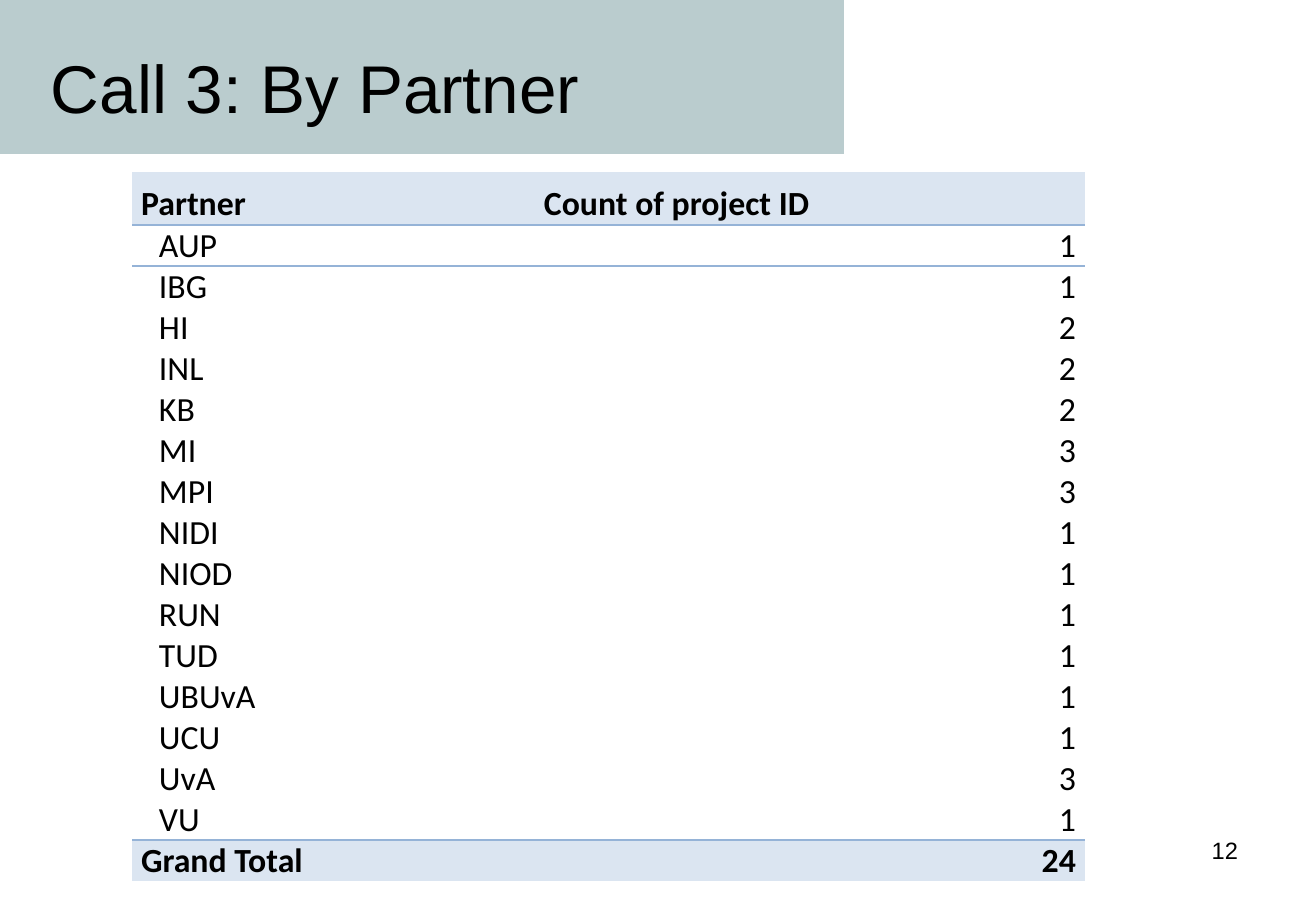
from lxml.etree import SubElement
from pptx import Presentation
from pptx.dml.color import RGBColor
from pptx.enum.shapes import MSO_SHAPE
from pptx.enum.text import MSO_ANCHOR, PP_ALIGN
from pptx.oxml import parse_xml
from pptx.oxml.ns import nsdecls, qn
from pptx.util import Pt

SCALE = 7526
COLORS = {"band": "BACCCE", "head": "DBE5F1", "rule": "95B3D7", "text": "000000"}
NO_GRID = "{2D5ABB26-0587-4C30-8999-92F81FD0307C}"
COUNTS = [
    ("AUP", 1), ("IBG", 1), ("HI", 2), ("INL", 2), ("KB", 2),
    ("MI", 3), ("MPI", 3), ("NIDI", 1), ("NIOD", 1), ("RUN", 1),
    ("TUD", 1), ("UBUvA", 1), ("UCU", 1), ("UvA", 3), ("VU", 1),
]


def px(*sizes):
    return [size * SCALE for size in sizes]


class Painter:
    """Draws the elements of one slide in a shared style."""

    def __init__(self, slide):
        self.slide = slide

    def style(self, para, size, font, bold=False, align=PP_ALIGN.LEFT):
        para.alignment = align
        for run in para.runs:
            run.font.size = Pt(size)
            run.font.name = font
            run.font.bold = bold
            run.font.color.rgb = RGBColor.from_string(COLORS["text"])

    def band(self, box, color):
        shape = self.slide.shapes.add_shape(MSO_SHAPE.RECTANGLE, *px(*box))
        shape.shadow.inherit = False
        shape.fill.solid()
        shape.fill.fore_color.rgb = RGBColor.from_string(COLORS[color])
        shape.line.fill.background()

    def text(self, box, text, size, align=PP_ALIGN.LEFT, anchor=MSO_ANCHOR.TOP):
        frame = self.slide.shapes.add_textbox(*px(*box)).text_frame
        frame.word_wrap = True
        frame.vertical_anchor = anchor
        frame.text = text
        self.style(frame.paragraphs[0], size, "Arial", align=align)

    def rule(self, cell, side):
        props = cell._tc.get_or_add_tcPr()
        line = parse_xml(f'<a:{side} {nsdecls("a")} w="12700"/>')
        fill = SubElement(line, qn("a:solidFill"))
        SubElement(fill, qn("a:srgbClr"), val=COLORS["rule"])
        props.insert(0, line)

    def cell(self, cell, text, strong, align):
        cell.text = text
        cell.vertical_anchor = MSO_ANCHOR.BOTTOM
        cell.margin_left, cell.margin_right = px(9, 9)
        cell.margin_top = cell.margin_bottom = 0
        para = cell.text_frame.paragraphs[0]
        self.style(para, 20, "Calibri", strong, align)
        if strong:
            cell.fill.solid()
            cell.fill.fore_color.rgb = RGBColor.from_string(COLORS["head"])
        else:
            cell.fill.background()
            if align == PP_ALIGN.LEFT:
                para._p.get_or_add_pPr().set("indent", str(18 * SCALE))

    def table(self, spot, widths, top, height, rows):
        last = len(rows) - 1
        box = (*spot, sum(widths), top + height * last)
        table = self.slide.shapes.add_table(len(rows), len(widths), *px(*box)).table
        table.first_row = table.horz_banding = False
        table._tbl.tblPr.find(qn("a:tableStyleId")).text = NO_GRID
        for col, width in zip(table.columns, px(*widths)):
            col.width = width
        for i, row in enumerate(rows):
            table.rows[i].height = (height if i else top) * SCALE
            for j, value in enumerate(row):
                cell = table.cell(i, j)
                align = PP_ALIGN.RIGHT if i and j else PP_ALIGN.LEFT
                self.cell(cell, str(value), i in (0, last), align)
                if i in (0, last - 1):
                    self.rule(cell, "lnB")
                if i in (1, last):
                    self.rule(cell, "lnT")


def main():
    deck = Presentation()
    deck.slide_width, deck.slide_height = px(1316, 911)
    art = Painter(deck.slides.add_slide(deck.slide_layouts[6]))
    art.band((0, 0, 844, 154), "band")
    art.text((943, 830, 307, 63), "12", 14, align=PP_ALIGN.RIGHT)
    art.text((39, 32, 840, 109), "Call 3: By Partner", 40, anchor=MSO_ANCHOR.MIDDLE)
    total = sum(count for _, count in COUNTS)
    rows = [("Partner", "Count of project ID"), *COUNTS, ("Grand Total", total)]
    art.table((132, 172), (403, 550), 53, 41, rows)
    deck.save("out.pptx")


if __name__ == "__main__":
    main()
